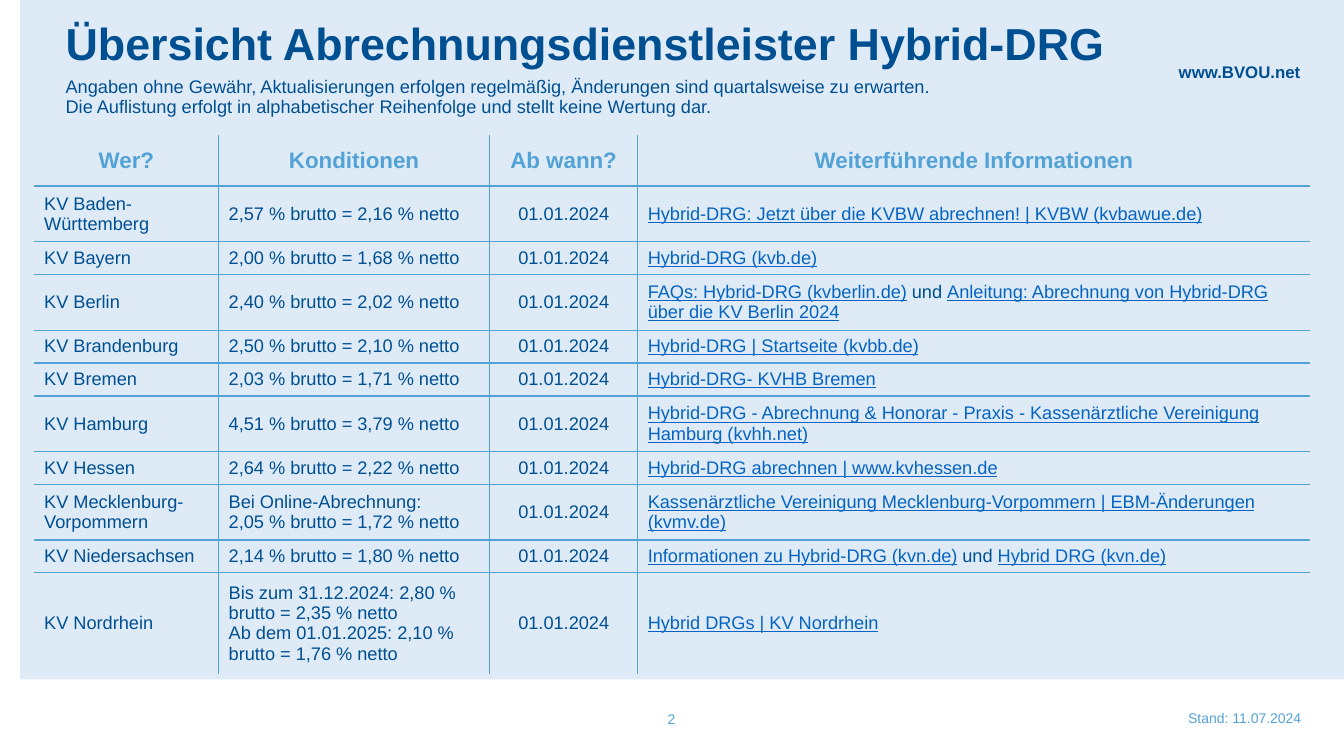
from lxml.etree import SubElement
from pptx import Presentation
from pptx.dml.color import RGBColor
from pptx.enum.shapes import MSO_SHAPE as Preset
from pptx.enum.text import MSO_ANCHOR as Anchor, MSO_AUTO_SIZE as AutoSize, PP_ALIGN as Align
from pptx.oxml import parse_xml
from pptx.oxml.ns import nsdecls, qn
from pptx.util import Cm, Pt

NAVY, SKY, LINK, PALE = "004F91", "53A2D5", "0563C1", "DEEBF7"
NO_STYLE = "{2D5ABB26-0587-4C30-8999-92F81FD0307C}"


def color(hex_string):
    return RGBColor.from_string(hex_string)


def write(paragraph, text, size=13, fill=NAVY, bold=False, underline=False, align=Align.LEFT):
    paragraph.alignment = align
    run = paragraph.add_run()
    run.text = text
    font = run.font
    font.name, font.size, font.bold, font.underline = "Arial", Pt(size), bold, underline
    font.color.rgb = color(fill)


headings = ["Wer?", "Konditionen", "Ab wann?", "Weiterführende Informationen"]
providers = [
    ("KV Baden-Württemberg", ["2,57 % brutto = 2,16 % netto"],
     ["Hybrid-DRG: Jetzt über die KVBW abrechnen! | KVBW (kvbawue.de)"]),
    ("KV Bayern", ["2,00 % brutto = 1,68 % netto"], ["Hybrid-DRG (kvb.de)"]),
    ("KV Berlin", ["2,40 % brutto = 2,02 % netto"],
     ["FAQs: Hybrid-DRG (kvberlin.de)",
      "Anleitung: Abrechnung von Hybrid-DRG über die KV Berlin 2024"]),
    ("KV Brandenburg", ["2,50 % brutto = 2,10 % netto"], ["Hybrid-DRG | Startseite (kvbb.de)"]),
    ("KV Bremen", ["2,03 % brutto = 1,71 % netto"], ["Hybrid-DRG- KVHB Bremen"]),
    ("KV Hamburg", ["4,51 % brutto = 3,79 % netto"],
     ["Hybrid-DRG - Abrechnung & Honorar - Praxis - Kassenärztliche Vereinigung Hamburg (kvhh.net)"]),
    ("KV Hessen", ["2,64 % brutto = 2,22 % netto"], ["Hybrid-DRG abrechnen | www.kvhessen.de"]),
    ("KV Mecklenburg-Vorpommern", ["Bei Online-Abrechnung:", "2,05 % brutto = 1,72 % netto"],
     ["Kassenärztliche Vereinigung Mecklenburg-Vorpommern | EBM-Änderungen (kvmv.de)"]),
    ("KV Niedersachsen", ["2,14 % brutto = 1,80 % netto"],
     ["Informationen zu Hybrid-DRG (kvn.de)", "Hybrid DRG (kvn.de)"]),
    ("KV Nordrhein",
     ["Bis zum 31.12.2024: 2,80 % brutto = 2,35 % netto",
      "Ab dem 01.01.2025: 2,10 % brutto = 1,76 % netto"],
     ["Hybrid DRGs | KV Nordrhein"]),
]
start_date = "01.01.2024"
column_widths = [4.65, 6.83, 3.73, 16.95]
row_heights = [1.29, 1.4, 0.83, 1.4, 0.83, 0.83, 1.4, 0.83, 1.4, 0.83, 2.54]

presentation = Presentation()
presentation.slide_width, presentation.slide_height = Cm(33.87), Cm(19.05)
slide = presentation.slides.add_slide(presentation.slide_layouts[1])

panel = slide.shapes.add_shape(Preset.RECTANGLE, Cm(0.5), 0, Cm(33.37), Cm(17.12))
panel.shadow.inherit = False
panel.fill.solid()
panel.fill.fore_color.rgb = color(PALE)
panel.line.fill.background()
slide.shapes._spTree.insert(2, panel._element)

title, body = slide.shapes.title, slide.placeholders[1]
for placeholder, top, height in [(title, 0.43, 1.4), (body, 1.83, 1.2)]:
    placeholder.left, placeholder.top = Cm(1.4), Cm(top)
    placeholder.width, placeholder.height = Cm(27.4), Cm(height)
    placeholder.text_frame.auto_size = AutoSize.NONE
    placeholder.text_frame.vertical_anchor = Anchor.TOP

heading = title.text_frame.paragraphs[0]
heading.line_spacing = 0.9
write(heading, "Übersicht Abrechnungsdienstleister Hybrid-DRG", size=32, bold=True)

notices = [
    "Angaben ohne Gewähr, Aktualisierungen erfolgen regelmäßig, Änderungen sind quartalsweise zu erwarten.",
    "Die Auflistung erfolgt in alphabetischer Reihenfolge und stellt keine Wertung dar.",
]
for index, notice in enumerate(notices):
    paragraph = body.text_frame.add_paragraph() if index else body.text_frame.paragraphs[0]
    properties = paragraph._p.get_or_add_pPr()
    properties.set("marL", "0")
    properties.set("indent", "0")
    SubElement(properties, qn("a:buNone"))
    paragraph.line_spacing, paragraph.space_before = 0.9, Pt(0)
    write(paragraph, notice)

labels = [
    ("www.BVOU.net", 27.66, 1.42, 5.36, 0.77, dict(size=12, bold=True, align=Align.RIGHT)),
    ("Stand: 11.07.2024", 25.7, 17.58, 7.34, 1.02, dict(size=10, fill=SKY, align=Align.RIGHT)),
    ("2", 15.44, 17.6, 2.97, 1.02, dict(size=10, fill=SKY, align=Align.CENTER)),
]
for text, left, top, width, height, style in labels:
    label = slide.shapes.add_textbox(Cm(left), Cm(top), Cm(width), Cm(height))
    label.text_frame.word_wrap = True
    label.text_frame.vertical_anchor = Anchor.MIDDLE
    write(label.text_frame.paragraphs[0], text, **style)

frame = slide.shapes.add_table(len(row_heights), len(column_widths), Cm(0.86), Cm(3.4),
                               Cm(sum(column_widths)), Cm(sum(row_heights)))
table = frame.table
table.first_row = table.horz_banding = False
table._tbl.tblPr.find(qn("a:tableStyleId")).text = NO_STYLE
for column, width in zip(table.columns, column_widths):
    column.width = Cm(width)
for row, height in zip(table.rows, row_heights):
    row.height = Cm(height)

for index, text in enumerate(headings):
    write(table.cell(0, index).text_frame.paragraphs[0], text,
          size=16, fill=SKY, bold=True, align=Align.CENTER)

for row, (provider, conditions, links) in enumerate(providers, 1):
    name, terms, date, information = [cell.text_frame for cell in table.rows[row].cells]
    write(name.paragraphs[0], provider)
    for index, condition in enumerate(conditions):
        write(terms.add_paragraph() if index else terms.paragraphs[0], condition)
    write(date.paragraphs[0], start_date, align=Align.CENTER)
    for index, link in enumerate(links):
        if index:
            write(information.paragraphs[0], " und ")
        write(information.paragraphs[0], link, fill=LINK, underline=True)

last_row, last_column = len(row_heights) - 1, len(column_widths) - 1
for row in range(last_row + 1):
    for column in range(last_column + 1):
        cell = table.cell(row, column)
        cell.vertical_anchor = Anchor.MIDDLE
        cell.fill.background()
        borders = [
            ("lnL", 1 if column > 0 else 0),
            ("lnR", 1 if column < last_column else 0),
            ("lnT", {0: 0, 1: 2.25}.get(row, 1)),
            ("lnB", {0: 2.25, last_row: 0}.get(row, 1)),
        ]
        visible = [(side, weight) for side, weight in borders if weight]
        for position, (side, weight) in enumerate(visible):
            cell._tc.get_or_add_tcPr().insert(position, parse_xml(
                f'<a:{side} {nsdecls("a")} w="{Pt(weight)}"><a:solidFill>'
                f'<a:srgbClr val="{SKY}"/></a:solidFill></a:{side}>'))

presentation.save("out.pptx")
